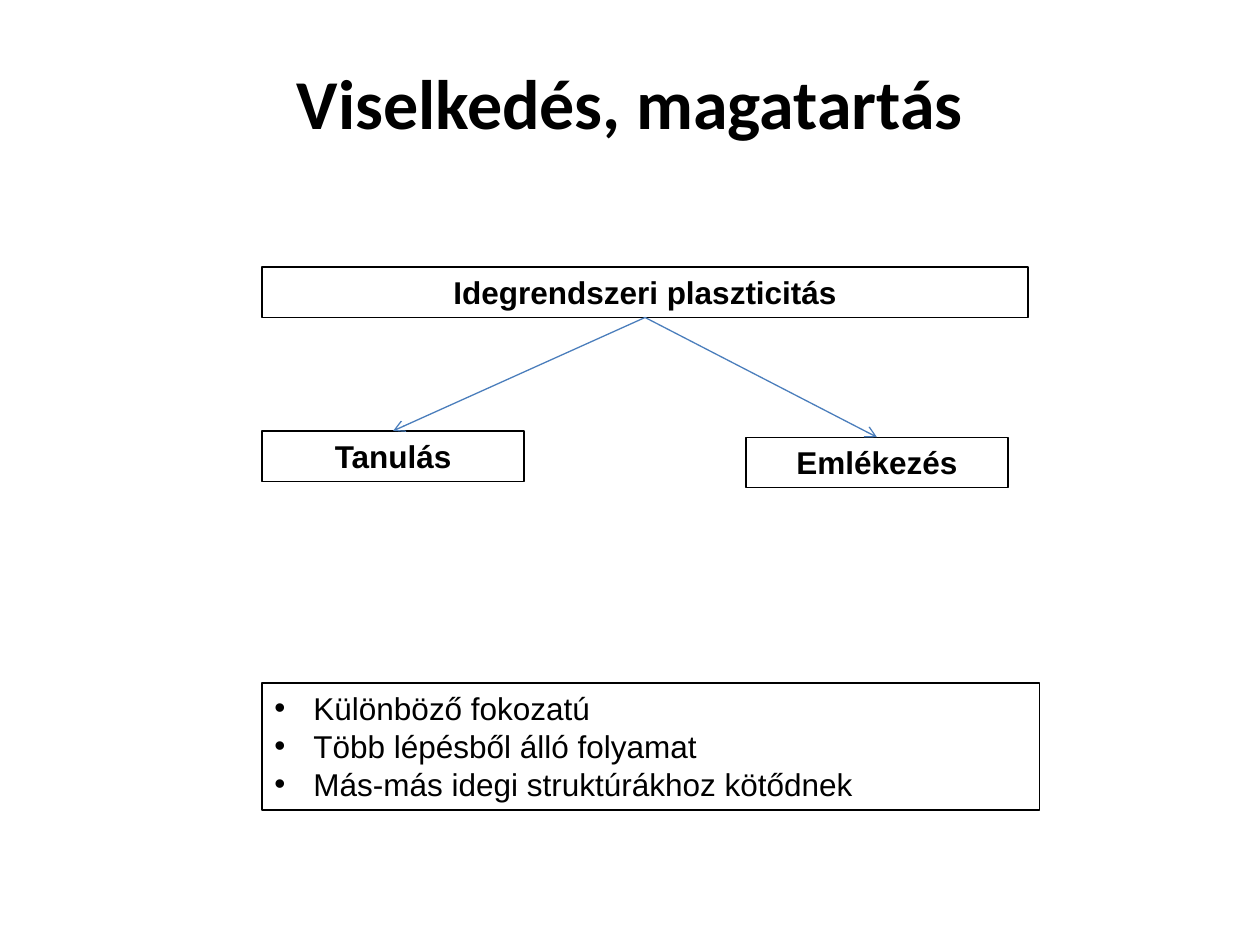
"""Build a slide on behaviour and neural plasticity."""
import pptx
import pptx.util
import pptx.dml.color
import pptx.enum.shapes
import pptx.enum.text
import pptx.oxml.ns
from lxml import etree

WIDTH, HEIGHT = 10, 7.5
COLORS = {"text": "000000", "border": "000000", "arrow": "4B7EBC"}
LEFT, ROW, BRANCH = 2.08, 0.4, 2.08
TITLE = ("Viselkedés, magatartás", (0.05 * WIDTH, 0.04 * HEIGHT, 0.9 * WIDTH, 1.01))
BOXES = {
    "plasticity": ("Idegrendszeri plaszticitás", (LEFT, 2.12, 6.08, ROW)),
    "learning": ("Tanulás", (LEFT, 3.42, BRANCH, ROW)),
    "memory": ("Emlékezés", (5.92, 3.47, BRANCH, ROW)),
}
FEATURES = [
    "Különböző fokozatú",
    "Több lépésből álló folyamat",
    "Más-más idegi struktúrákhoz kötődnek",
]
FEATURE_PLACE = (LEFT, 5.42, 6.17, 1.01)
ARROWS = [("plasticity", "learning"), ("plasticity", "memory")]
INDENT = 0.31


def color(name):
    return pptx.dml.color.RGBColor.from_string(COLORS[name])


def add_child(parent, tag, **attributes):
    return etree.SubElement(parent, pptx.oxml.ns.qn(tag), attributes)


def add_text(slide, lines, place, size=18, font="Arial", bold=True, border=True, bullets=False):
    shape = slide.shapes.add_textbox(*map(pptx.util.Inches, place))
    frame = shape.text_frame
    frame.word_wrap = True
    frame.text = "\n".join(lines)
    if border:
        shape.line.color.rgb = color("border")
        shape.line.width = pptx.util.Pt(0.75)
    else:
        frame.vertical_anchor = pptx.enum.text.MSO_ANCHOR.MIDDLE
    for paragraph in frame.paragraphs:
        if bullets:
            properties = paragraph._p.get_or_add_pPr()
            indent = pptx.util.Inches(INDENT)
            properties.set("marL", str(indent))
            properties.set("indent", str(-indent))
            add_child(properties, "a:buFont", typeface="Arial")
            add_child(properties, "a:buChar", char="•")
        else:
            paragraph.alignment = pptx.enum.text.PP_ALIGN.CENTER
        paragraph.font.name = font
        paragraph.font.size = pptx.util.Pt(size)
        paragraph.font.bold = bold
        paragraph.font.color.rgb = color("text")
    return shape


def add_arrow(slide, parent, child):
    connector = slide.shapes.add_connector(pptx.enum.shapes.MSO_CONNECTOR.STRAIGHT, 0, 0, 0, 0)
    connector.begin_connect(parent, 2)
    connector.end_connect(child, 0)
    connector.line.color.rgb = color("arrow")
    connector.line.width = pptx.util.Pt(0.75)
    add_child(connector.line._get_or_add_ln(), "a:tailEnd", type="arrow")
    add_child(connector._element.spPr, "a:effectLst")


def main():
    presentation = pptx.Presentation()
    presentation.slide_width = pptx.util.Inches(WIDTH)
    presentation.slide_height = pptx.util.Inches(HEIGHT)
    slide = presentation.slides.add_slide(presentation.slide_layouts[6])
    title, title_place = TITLE
    add_text(slide, [title], title_place, size=40, font="Calibri", border=False)
    boxes = {name: add_text(slide, [label], place) for name, (label, place) in BOXES.items()}
    add_text(slide, FEATURES, FEATURE_PLACE, bold=False, bullets=True)
    for start, end in ARROWS:
        add_arrow(slide, boxes[start], boxes[end])
    presentation.save("out.pptx")


if __name__ == "__main__":
    main()
